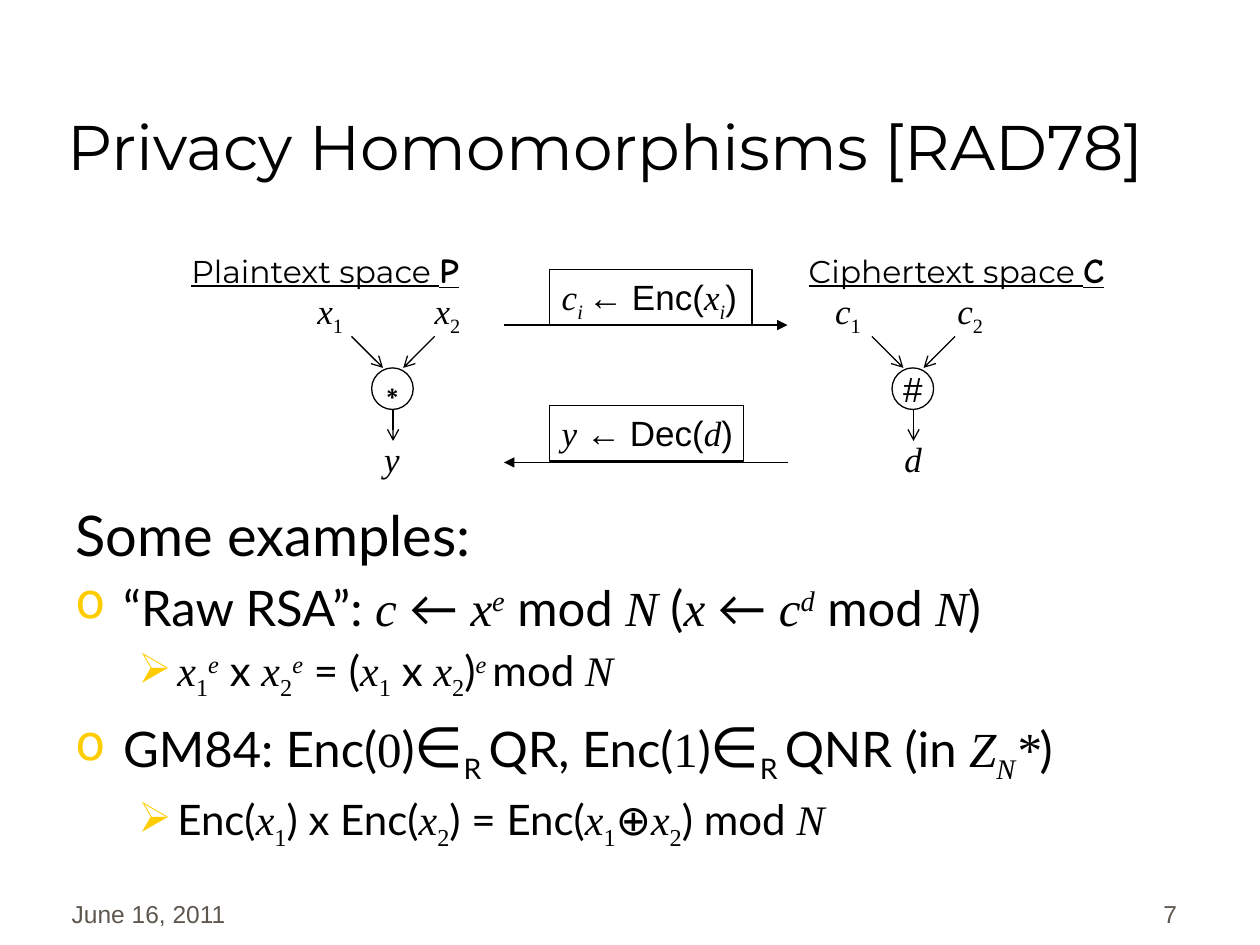
"""Build the slide on privacy homomorphisms."""
from dataclasses import dataclass
from typing import NamedTuple, Optional

import lxml.etree
import pptx
import pptx.dml.color
import pptx.enum.shapes
import pptx.enum.text
import pptx.oxml.ns
import pptx.util

PX = 9144
BLACK = pptx.dml.color.RGBColor(0x00, 0x00, 0x00)
GREY = pptx.dml.color.RGBColor(0x5E, 0x57, 0x4E)
GOLD = pptx.dml.color.RGBColor(0xFF, 0xCC, 0x00)
SERIF, SANS, LATO = "Times New Roman", "Arial", "Lato"
HEAD, HAND = "Montserrat", "Comic Neue"
ALIGN = pptx.enum.text.PP_ALIGN
ANCHOR = pptx.enum.text.MSO_ANCHOR
FORM = pptx.enum.shapes.MSO_SHAPE


class Run(NamedTuple):
    text: str
    face: str = LATO
    slant: bool = False
    base: int = 0
    size: Optional[int] = None
    bold: bool = False
    under: bool = False


class Box(NamedTuple):
    left: int
    top: int
    width: int
    height: int


class Level(NamedTuple):
    mark: str
    margin: int
    indent: int


@dataclass
class Line:
    runs: list
    size: int
    level: Level


@dataclass
class Gate:
    mid: int
    sign: str
    name: str
    out: str
    label: Box
    space: str
    code: str
    inputs: Box
    tab: int


def var(text: str, base: int = 0) -> Run:
    return Run(text, SERIF, True, base)


def num(text: str, base: int = 0) -> Run:
    return Run(text, SERIF, False, base)


def sub(name: str, index: str) -> list:
    return [var(name), num(index, -25)]


def px(count: int) -> int:
    return pptx.util.Emu(count * PX)


def child(parent, tag: str, **values):
    return lxml.etree.SubElement(parent, pptx.oxml.ns.qn(tag), **values)


def fill_line(para, runs: list, size: int, color=BLACK) -> None:
    for item in runs:
        run = para.add_run()
        run.text = item.text
        font = run.font
        font.name, font.size = item.face, pptx.util.Pt(item.size or size)
        font.italic, font.bold, font.underline = item.slant, item.bold, item.under
        font.color.rgb = color
        if item.base:
            run._r.get_or_add_rPr().set("baseline", str(item.base * 1000))


def set_frame(frame, anchor=ANCHOR.TOP, wrap: bool = True) -> None:
    frame.word_wrap = wrap
    frame.vertical_anchor = anchor


def add_text(slide, box: Box, runs: list, size: int, anchor=ANCHOR.TOP,
             align=ALIGN.LEFT, color=BLACK, tab: int = 0) -> None:
    frame = slide.shapes.add_textbox(*map(px, box)).text_frame
    set_frame(frame, anchor)
    para = frame.paragraphs[0]
    para.alignment = align
    if tab:
        stops = child(para._p.get_or_add_pPr(), "a:tabLst")
        child(stops, "a:tab", pos=str(px(tab)), algn="l")
    fill_line(para, runs, size, color)


def add_form(slide, form, box: Box, runs: list, anchor, align) -> None:
    shape = slide.shapes.add_shape(form, *map(px, box))
    shape.shadow.inherit = False
    shape.fill.background()
    shape.line.color.rgb = BLACK
    shape.line.width = pptx.util.Pt(0.75)
    set_frame(shape.text_frame, anchor, False)
    para = shape.text_frame.paragraphs[0]
    para.alignment = align
    fill_line(para, runs, 20)


def add_arrow(slide, start: tuple, end: tuple, tip: str = "arrow") -> None:
    kind = pptx.enum.shapes.MSO_CONNECTOR.STRAIGHT
    line = slide.shapes.add_connector(kind, *map(px, start + end))
    line.line.color.rgb = BLACK
    line.line.width = pptx.util.Pt(0.75)
    child(line.line._get_or_add_ln(), "a:tailEnd", type=tip)
    child(line._element.spPr, "a:effectLst")


def add_gate(slide, gate: Gate) -> None:
    title = [Run(gate.space, HEAD, under=True),
             Run(gate.code, HAND, size=20, bold=True, under=True)]
    add_text(slide, gate.label, title, 18)
    pair = sub(gate.name, "1") + [num("\t")] + sub(gate.name, "2")
    add_text(slide, gate.inputs, pair, 20, tab=gate.tab)
    left = gate.mid - 17
    add_form(slide, FORM.OVAL, Box(left, 292, 33, 33), [Run(gate.sign, SANS)],
             ANCHOR.MIDDLE, ALIGN.CENTER)
    for side in (-1, 1):
        add_arrow(slide, (gate.mid + side * 33, 267), (gate.mid + side * 8, 292))
    add_arrow(slide, (gate.mid, 325), (gate.mid, 350))
    add_text(slide, Box(left, 342, 33, 43), [var(gate.out)], 20)


def add_body(slide, box: Box, lines: list) -> None:
    frame = slide.shapes.add_textbox(*map(px, box)).text_frame
    set_frame(frame)
    for index, line in enumerate(lines):
        para = frame.add_paragraph() if index else frame.paragraphs[0]
        if index:
            para.space_before = pptx.util.Pt(round(line.size * 0.2, 1))
        props = para._p.get_or_add_pPr()
        props.set("marL", str(px(line.level.margin)))
        props.set("indent", str(px(line.level.indent)))
        if line.level.mark:
            child(child(props, "a:buClr"), "a:srgbClr", val=str(GOLD))
            child(props, "a:buChar", char=line.level.mark)
        fill_line(para, line.runs, line.size)


PLAIN, OUTER, INNER = Level("", 38, -38), Level("o", 38, -38), Level("➢", 81, -31)
MEMBER = [Run("∈", size=32), Run("R ", base=-25)]
BODY = [
    Line([Run("Some examples:")], 32, PLAIN),
    Line([Run("“Raw RSA”: "), var("c "), Run("← "), var("x"), var("e", 30),
          Run(" mod "), var("N"), Run(" ("), var("x "), Run("← "), var("c"),
          var("d", 30), Run(" mod "), var("N"), Run(")")], 28, OUTER),
    Line([*sub("x", "1"), var("e", 30), Run(" x "), *sub("x", "2"), var("e", 30),
          Run(" = ("), *sub("x", "1"), Run(" x "), *sub("x", "2"), Run(")"),
          var("e ", 30), Run("mod "), var("N")], 24, INNER),
    Line([Run("GM84: Enc("), num("0"), Run(")"), *MEMBER, Run("QR, Enc("),
          num("1"), Run(")"), *MEMBER, Run("QNR (in "), var("Z"), var("N", -25),
          var("*"), Run(")")], 28, OUTER),
    Line([Run("Enc("), *sub("x", "1"), Run(") x Enc("), *sub("x", "2"),
          Run(") = Enc("), *sub("x", "1"), Run("⊕"), *sub("x", "2"),
          Run(") mod "), var("N")], 24, INNER),
]
GATES = [
    Gate(312, "∗", "x", "y", Box(142, 192, 277, 43), "Plaintext space ", "P",
         Box(242, 225, 138, 43), 93),
    Gate(725, "#", "c", "d", Box(632, 192, 293, 43), "Ciphertext space ", "C",
         Box(653, 225, 163, 43), 97),
]
MAPS = [
    (Box(436, 214, 161, 44), [var("c"), var("i ", -25), num("← "), Run("Enc(", SANS),
                              var("x"), var("i", -25), Run(")", SANS)]),
    (Box(436, 322, 154, 44), [var("y "), num("← "), Run("Dec(", SANS), var("d"),
                              Run(")", SANS)]),
]


def main() -> None:
    deck = pptx.Presentation()
    deck.slide_width, deck.slide_height = px(1000), px(750)
    slide = deck.slides.add_slide(deck.slide_layouts[6])
    for left, text, align in ((47, "June 16, 2011", ALIGN.LEFT), (736, "7", ALIGN.RIGHT)):
        add_text(slide, Box(left, 692, 208, 50), [Run(text, SANS)], 14,
                 ANCHOR.BOTTOM, align, GREY)
    add_text(slide, Box(44, 25, 939, 125), [Run("Privacy Homomorphisms [RAD78]", HEAD)],
             36, ANCHOR.BOTTOM)
    add_body(slide, Box(50, 392, 933, 308), BODY)
    for gate in GATES:
        add_gate(slide, gate)
    for box, runs in MAPS:
        add_form(slide, FORM.RECTANGLE, box, runs, ANCHOR.TOP, ALIGN.LEFT)
    add_arrow(slide, (400, 258), (625, 258), "triangle")
    add_arrow(slide, (625, 367), (400, 367), "triangle")
    deck.save("out.pptx")


if __name__ == "__main__":
    main()
